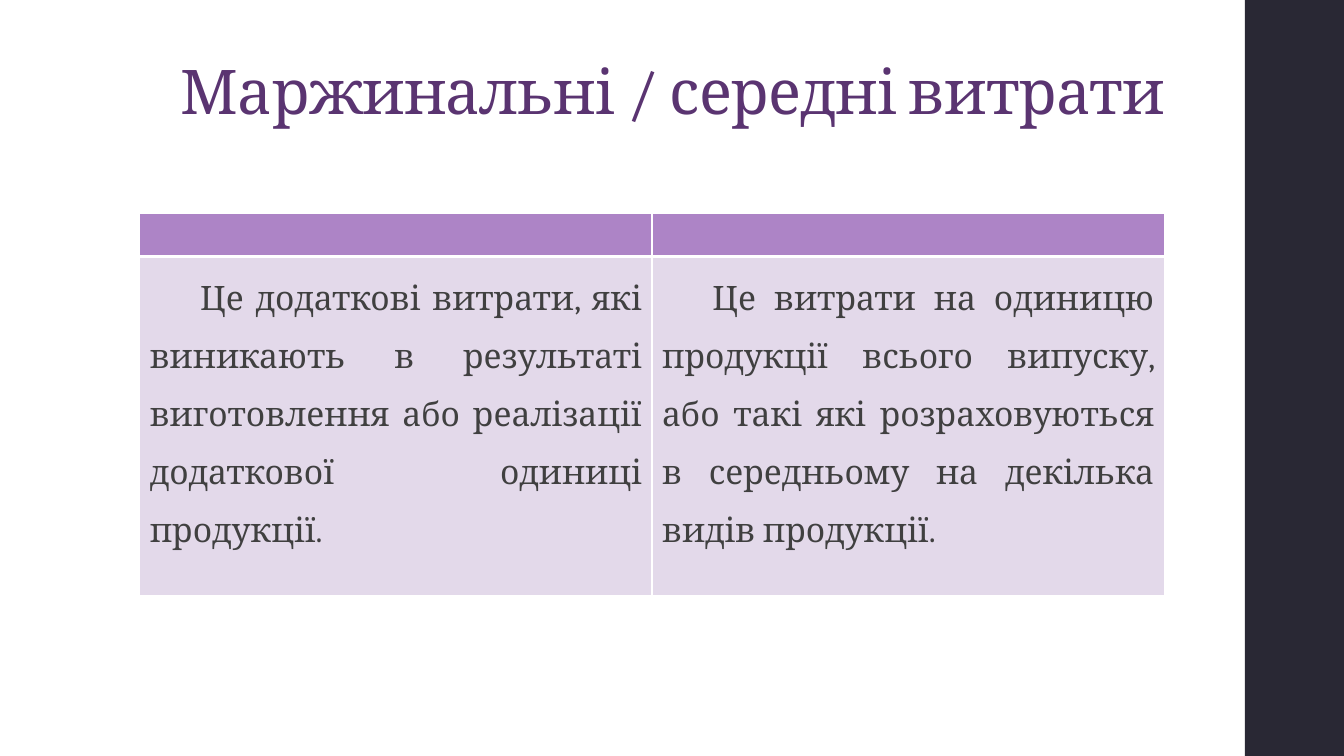
from lxml import etree
from pptx import Presentation
from pptx.dml.color import RGBColor
from pptx.enum.shapes import MSO_SHAPE
from pptx.enum.text import MSO_ANCHOR, PP_ALIGN
from pptx.oxml.ns import qn
from pptx.util import Cm, Pt

RECT = MSO_SHAPE.RECTANGLE
BOTTOM = MSO_ANCHOR.BOTTOM
CENTER, JUSTIFY = PP_ALIGN.CENTER, PP_ALIGN.JUSTIFY
TITLE_ONLY = 5

FONT = "Cambria"
COLORS = {
    "sidebar": "292834",
    "title": "5A3471",
    "header": "AD84C6",
    "body": "E3D9EA",
    "text": "404040",
    "border": "FFFFFF",
}
TITLE = "Маржинальні / середні витрати"
DEFINITIONS = [
    "Це додаткові витрати, які виникають в результаті виготовлення "
    "або реалізації додаткової одиниці продукції.",
    "Це витрати на одиницю продукції всього випуску, або такі які "
    "розраховуються в середньому на декілька видів продукції.",
]


def rgb(name):
    return RGBColor.from_string(COLORS[name])


def write(tf, text, color, size, **paragraph_format):
    p = tf.paragraphs[0]
    for name, value in paragraph_format.items():
        setattr(p, name, value)
    r = p.add_run()
    r.text = text
    for name, value in {"name": FONT, "size": Pt(size), "bold": False}.items():
        setattr(r.font, name, value)
    r.font.color.rgb = rgb(color)
    return p, r


def add_sidebar(slide, prs):
    left = Cm(31.37)
    sp = slide.shapes.add_shape(RECT, left, 0, prs.slide_width - left, prs.slide_height)
    sp.shadow.inherit = False
    sp.fill.solid()
    sp.fill.fore_color.rgb = rgb("sidebar")
    sp.line.fill.background()


def set_title(slide):
    sp = slide.shapes.title
    box = {"left": Cm(3.5), "top": Cm(1.02), "width": Cm(26.92), "height": Cm(2.34)}
    for name, value in box.items():
        setattr(sp, name, value)
    tf = sp.text_frame
    tf.word_wrap = True
    tf.vertical_anchor = BOTTOM
    p, r = write(tf, TITLE, "title", 44, alignment=CENTER, line_spacing=0.9)
    r.font._element.set("spc", "-50")


def style_cell(cell, fill, **borders):
    """Fill the cell and draw its borders, given as side=width in points."""
    cell.fill.solid()
    cell.fill.fore_color.rgb = rgb(fill)
    tc_pr = cell._tc.get_or_add_tcPr()
    for i, side in enumerate("LRTB"):
        ln = etree.Element(qn(f"a:ln{side}"), w=str(Pt(borders.get(side, 1))))
        solid = etree.SubElement(ln, qn("a:solidFill"))
        etree.SubElement(solid, qn("a:srgbClr"), val=COLORS["border"])
        tc_pr.insert(i, ln)


def add_definitions(slide):
    frame = slide.shapes.add_table(
        2, len(DEFINITIONS), Cm(3.52), Cm(5.37), Cm(25.82), Cm(9.65))
    table = frame.table
    table.horz_banding = False
    for row, height in zip(table.rows, (1.09, 8.56)):
        row.height = Cm(height)
    for col, text in enumerate(DEFINITIONS):
        style_cell(table.cell(0, col), "header", B=3)
        cell = table.cell(1, col)
        style_cell(cell, "body", T=3)
        p, r = write(cell.text_frame, text, "text", 24,
                     alignment=JUSTIFY, line_spacing=1.5)
        p._p.get_or_add_pPr().set("indent", str(Cm(1.27)))


def main():
    prs = Presentation()
    prs.slide_width, prs.slide_height = Cm(33.87), Cm(19.05)
    slide = prs.slides.add_slide(prs.slide_layouts[TITLE_ONLY])
    add_sidebar(slide, prs)
    set_title(slide)
    add_definitions(slide)
    prs.save("out.pptx")


if __name__ == "__main__":
    main()
